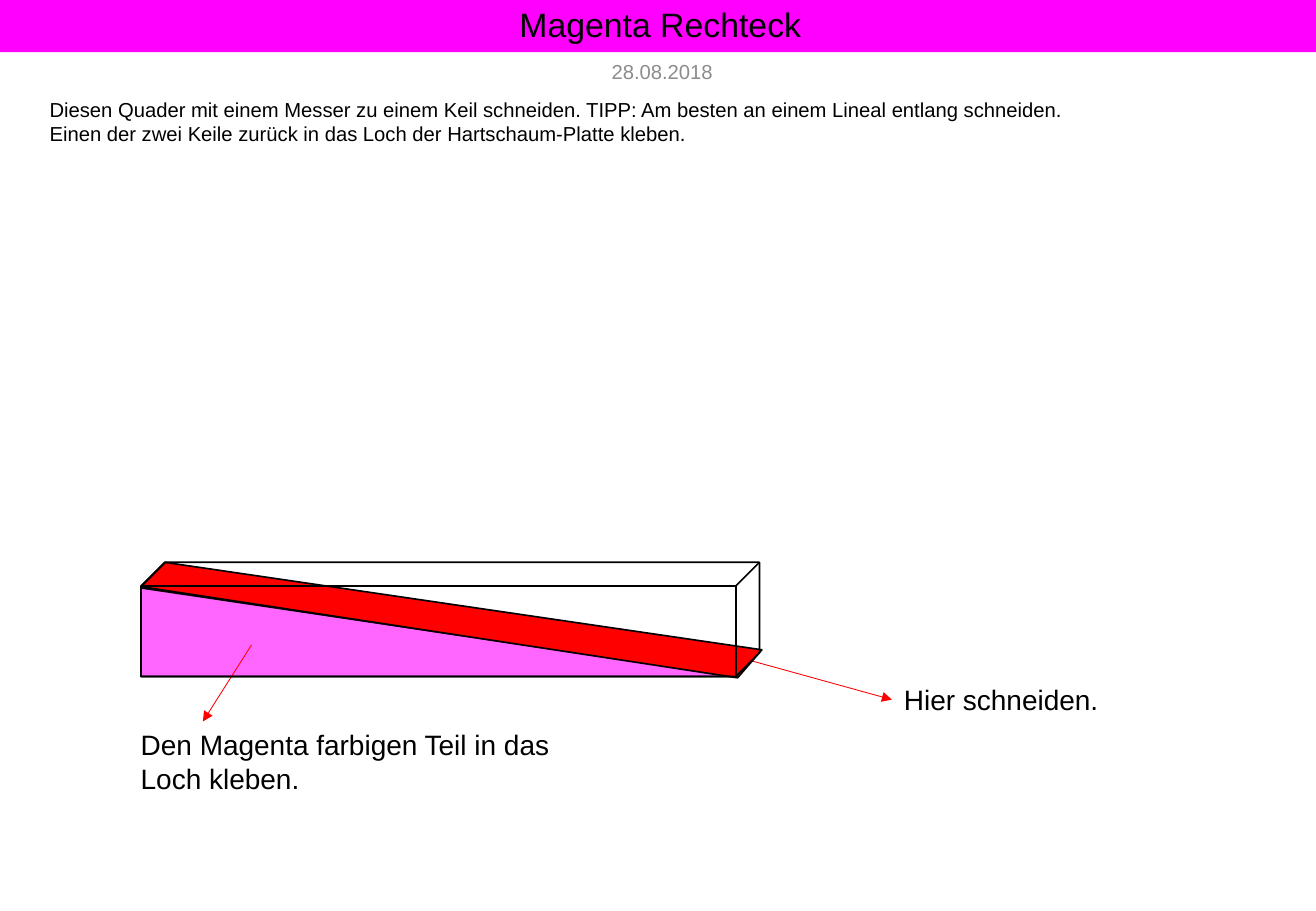
from dataclasses import dataclass

from lxml.etree import SubElement
from pptx import Presentation
from pptx.dml.color import RGBColor
from pptx.enum.shapes import MSO_CONNECTOR, MSO_SHAPE
from pptx.enum.text import MSO_ANCHOR, PP_ALIGN
from pptx.oxml.ns import qn
from pptx.util import Inches, Pt


@dataclass(frozen=True)
class Theme:
    font: str = "Arial"
    ink: str = "000000"
    gray: str = "8C8C8C"
    band: str = "FF00FF"
    wedge: str = "FF66FF"
    cut: str = "FF0000"
    head: float = 20
    body: float = 12
    label: float = 16.6
    edge: float = 1
    arrow: float = 0.5


THEME = Theme()


def color(code):
    return RGBColor.from_string(code)


def paint(shape, fill=None, line=None):
    shape.shadow.inherit = False
    if fill:
        shape.fill.solid()
        shape.fill.fore_color.rgb = color(fill)
    else:
        shape.fill.background()
    if line:
        shape.line.color.rgb = color(line)
        shape.line.width = Pt(THEME.edge)
    else:
        shape.line.fill.background()
    return shape


def add_part(slide, kind, box, **style):
    return paint(slide.shapes.add_shape(kind, *map(Inches, box)), **style)


def add_text(slide, text, box, size=THEME.body, ink=THEME.ink,
             align=PP_ALIGN.LEFT, anchor=MSO_ANCHOR.TOP, space=1.0):
    frame = slide.shapes.add_textbox(*map(Inches, box)).text_frame
    frame.word_wrap = True
    frame.vertical_anchor = anchor
    frame.text = text
    for para in frame.paragraphs:
        para.alignment = align
        para.line_spacing = space
        para.font.name = THEME.font
        para.font.size = Pt(size)
        para.font.color.rgb = color(ink)


def add_arrow(slide, start, end):
    line = slide.shapes.add_connector(
        MSO_CONNECTOR.STRAIGHT, *map(Inches, (*start, *end)))
    line.line.color.rgb = color(THEME.cut)
    line.line.width = Pt(THEME.arrow)
    SubElement(line.line._get_or_add_ln(), qn("a:tailEnd"), type="triangle")
    SubElement(line._element.spPr, qn("a:effectLst"))


def add_header(slide, box):
    left, top, width, height = box
    add_part(slide, MSO_SHAPE.RECTANGLE, box, fill=THEME.band)
    add_text(slide, "Magenta Rechteck", box, size=THEME.head,
             align=PP_ALIGN.CENTER, anchor=MSO_ANCHOR.MIDDLE, space=0.9)
    add_text(slide, "28.08.2018", (left + 4.8, top + height, 1.3, 0.31),
             ink=THEME.gray, align=PP_ALIGN.CENTER, anchor=MSO_ANCHOR.MIDDLE)


def add_steps(slide, box):
    add_text(
        slide,
        "Diesen Quader mit einem Messer zu einem Keil schneiden. "
        "TIPP: Am besten an einem Lineal entlang schneiden.\n"
        "Einen der zwei Keile zurück in das Loch der Hartschaum-Platte kleben.",
        box)


def add_block(slide, box):
    left, top, width, height = box
    depth = 0.2

    def place(x, y):
        return left + x, top + y

    add_part(slide, MSO_SHAPE.RIGHT_TRIANGLE,
             (*place(0, depth + 0.01), width - depth + 0.02,
              height - depth - 0.01),
             fill=THEME.wedge, line=THEME.ink)
    add_text(slide, "Hier schneiden.", (*place(6.18, 0.94), 2.25, 0.38),
             size=THEME.label)
    add_arrow(slide, place(4.95, 0.79), place(6.18, 1.13))
    add_text(slide, "Den Magenta farbigen Teil in das Loch kleben.",
             (*place(-0.1, 1.31), 3.78, 0.66), size=THEME.label)
    add_arrow(slide, place(0.91, 0.68), place(0.51, 1.31))

    corners = [(depth, 0), (width + 0.02, 0.72),
               (width - depth + 0.02, height + 0.01), (0, depth)]
    points = [tuple(map(Inches, place(*spot))) for spot in corners]
    path = slide.shapes.build_freeform(*points[0])
    path.add_line_segments(points[1:], close=True)
    paint(path.convert_to_shape(), fill=THEME.cut, line=THEME.ink)

    cube = add_part(slide, MSO_SHAPE.CUBE, box, line=THEME.ink)
    cube.adjustments[0] = 0.208


def main():
    deck = Presentation()
    deck.slide_width, deck.slide_height = Inches(10.83), Inches(7.5)
    slide = deck.slides.add_slide(deck.slide_layouts[6])
    add_header(slide, (0, 0, 10.87, 0.43))
    add_steps(slide, (0.31, 0.75, 10.24, 0.79))
    add_block(slide, (1.16, 4.63, 5.09, 0.94))
    deck.save("out.pptx")


if __name__ == "__main__":
    main()
